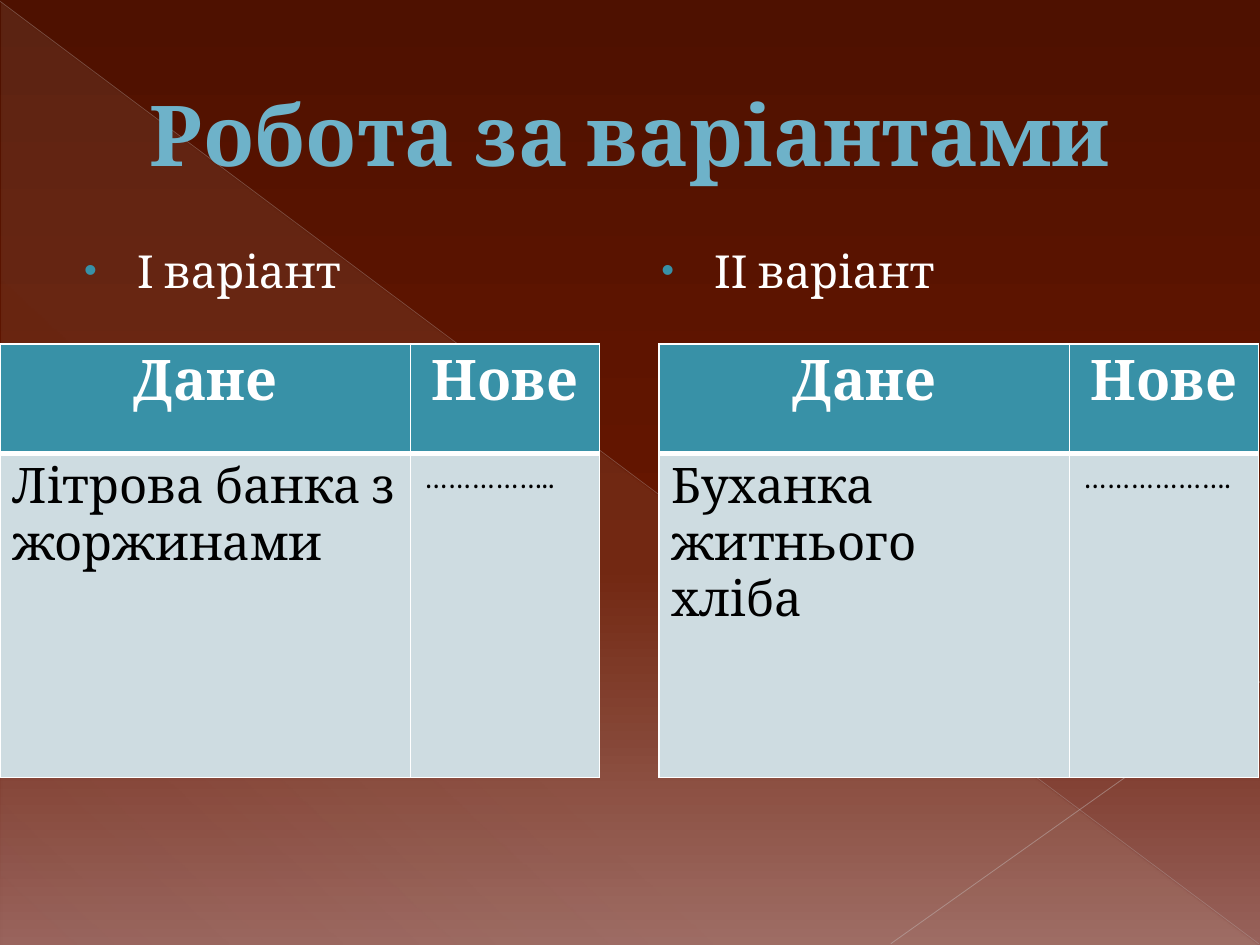
from lxml.etree import SubElement
from pptx import Presentation
from pptx.dml.color import RGBColor
from pptx.enum.shapes import MSO_CONNECTOR as Connector, MSO_SHAPE as Shape
from pptx.enum.text import MSO_ANCHOR as Anchor, PP_ALIGN as Align
from pptx.oxml.ns import qn
from pptx.util import Emu, Inches, Pt

FONT = "Cambria"
WHITE = RGBColor(0xFF, 0xFF, 0xFF)
BLACK = RGBColor(0x00, 0x00, 0x00)
TEAL = RGBColor(0x38, 0x91, 0xA7)
PALE = RGBColor(0xCE, 0xDC, 0xE1)
SKY = RGBColor(0x6E, 0xB2, 0xC9)
DEEP_TEAL = RGBColor(0x27, 0x64, 0x74)
CREAM = RGBColor(0xE7, 0xDE, 0xC9)
DARK_BROWN = RGBColor(0x4E, 0x11, 0x00)
RED_BROWN = RGBColor(0x67, 0x16, 0x00)
DUSTY_ROSE = RGBColor(0x97, 0x62, 0x5B)
WARM_GREY = RGBColor(0xBD, 0xB3, 0xB2)
LIGHT_GREY = RGBColor(0xC5, 0xBC, 0xBB)

TITLE = "Робота за варіантами"
HEADERS = ["Дане", "Нове"]
VARIANTS = [
    {"label": "І варіант", "label_left": 0.5, "table_left": 0,
     "row": ["Літрова банка з жоржинами", "…………….."]},
    {"label": "ІІ варіант", "label_left": 5.08, "table_left": 5.23,
     "row": ["Буханка житнього хліба", "………………."]},
]
COLUMN_WIDTHS = [3.26, 1.5]
ROW_HEIGHTS = [0.87, 2.57]
SKY_STOPS = [(0, DARK_BROWN, 100), (60, RED_BROWN, 100), (100, DUSTY_ROSE, 100)]
TRIANGLE_STOPS = [(0, CREAM, 10), (70, CREAM, 8), (100, CREAM, 1)]
RAYS = [
    ((0, 0.01), (9.99, 7.49), WARM_GREY, 0.39, 35),
    ((10, 5.41), (7.07, 7.49), LIGHT_GREY, 0.47, 45),
]
TITLE_FORMAT = {"name": FONT, "size": Pt(48), "bold": True}
LABEL_FORMAT = {"name": FONT, "size": Pt(26), "bold": False}
HEADER_FORMAT = {"name": FONT, "size": Pt(32), "bold": True}
GIVEN_FORMAT = {"name": FONT, "size": Pt(28), "bold": False}
DOTS_FORMAT = {"name": FONT, "size": Pt(18), "bold": False}


def add_color(parent, color, opacity=100):
    tint = SubElement(parent, qn("a:srgbClr"), val=str(color))
    if opacity < 100:
        SubElement(tint, qn("a:alpha"), val=str(opacity * 1000))


def set_gradient(properties, stops, angle):
    solid = properties.find(qn("a:solidFill"))
    gradient = SubElement(properties, qn("a:gradFill"), rotWithShape="1")
    stop_list = SubElement(gradient, qn("a:gsLst"))
    for position, color, opacity in stops:
        stop = SubElement(stop_list, qn("a:gs"), pos=str(position * 1000))
        add_color(stop, color, opacity)
    SubElement(gradient, qn("a:lin"), ang=str(angle * 60000), scaled="0")
    properties.replace(solid, gradient)


def write(frame, text, color, formats, align=Align.LEFT):
    paragraph = frame.paragraphs[0]
    paragraph.alignment = align
    run = paragraph.add_run()
    run.text = text
    run.font.color.rgb = color
    for attribute, value in formats.items():
        setattr(run.font, attribute, value)
    return paragraph


def add_bullet(paragraph):
    properties = paragraph._p.get_or_add_pPr()
    properties.set("marL", str(Inches(0.49)))
    properties.set("indent", str(Inches(-0.42)))
    before = SubElement(properties, qn("a:spcBef"))
    SubElement(before, qn("a:spcPct"), val="20000")
    add_color(SubElement(properties, qn("a:buClr")), TEAL)
    SubElement(properties, qn("a:buSzPct"), val="80000")
    SubElement(properties, qn("a:buFont"), typeface="Arial")
    SubElement(properties, qn("a:buChar"), char="•")


def style_cell(cell, fill, bottom_width):
    properties = cell._tc.get_or_add_tcPr()
    for side, width in (("L", 1), ("R", 1), ("T", 1), ("B", bottom_width)):
        border = SubElement(properties, qn(f"a:ln{side}"), w=str(Pt(width)))
        add_color(SubElement(border, qn("a:solidFill")), WHITE)
    cell.fill.solid()
    cell.fill.fore_color.rgb = fill


def add_backdrop(slide):
    slide.background.fill.solid()
    set_gradient(slide.element.find(".//" + qn("p:bgPr")), SKY_STOPS, 90)
    triangle = slide.shapes.add_shape(
        Shape.RIGHT_TRIANGLE, *map(Inches, (0.01, 0.02, 9.98, 7.48)))
    triangle.fill.solid()
    set_gradient(triangle._element.spPr, TRIANGLE_STOPS, 133)
    triangle.line.fill.background()
    triangle.shadow.inherit = False
    for start, end, color, width, opacity in RAYS:
        ray = slide.shapes.add_connector(
            Connector.STRAIGHT, *map(Inches, start + end))
        ray.line.width = Pt(width)
        ray.line.color.rgb = color
        properties = ray._element.spPr
        tint = properties.find(".//" + qn("a:srgbClr"))
        SubElement(tint, qn("a:alpha"), val=str(opacity * 1000))
        SubElement(properties, qn("a:effectLst"))


def add_title(slide):
    title = slide.shapes.title
    title.left, title.top, title.width, title.height = map(
        Inches, (0.5, 0.29, 9, 1.53))
    title.text_frame.vertical_anchor = Anchor.MIDDLE
    heading = write(title.text_frame, TITLE, SKY, TITLE_FORMAT, Align.CENTER)
    properties = heading.runs[0].font._element
    outline = SubElement(properties, qn("a:ln"), w=str(Pt(0.5)))
    add_color(SubElement(outline, qn("a:solidFill")), DEEP_TEAL)
    properties.insert(0, outline)
    slide.shapes._spTree.append(title._element)


def add_label(slide, variant):
    label = slide.shapes.add_textbox(
        *map(Inches, (variant["label_left"], 1.88, 4.42, 4.95)))
    label.text_frame.word_wrap = True
    add_bullet(write(label.text_frame, variant["label"], WHITE, LABEL_FORMAT))


def add_variant_table(slide, variant):
    table = slide.shapes.add_table(
        2, 2, Inches(variant["table_left"]), Inches(2.73),
        Inches(sum(COLUMN_WIDTHS)), Inches(sum(ROW_HEIGHTS))).table
    table.horz_banding = False
    for column, width in zip(table.columns, COLUMN_WIDTHS):
        column.width = Inches(width)
    for row, height in zip(table.rows, ROW_HEIGHTS):
        row.height = Inches(height)
    body_formats = [GIVEN_FORMAT, DOTS_FORMAT]
    for index, header in enumerate(HEADERS):
        head, body = table.cell(0, index), table.cell(1, index)
        style_cell(head, TEAL, 3)
        style_cell(body, PALE, 1)
        write(head.text_frame, header, WHITE, HEADER_FORMAT, Align.CENTER)
        write(body.text_frame, variant["row"][index], BLACK, body_formats[index])


def main():
    deck = Presentation()
    deck.slide_width, deck.slide_height = Inches(10), Inches(7.5)
    slide = deck.slides.add_slide(deck.slide_layouts[5])
    add_backdrop(slide)
    add_title(slide)
    for variant in VARIANTS:
        add_label(slide, variant)
    for variant in VARIANTS:
        add_variant_table(slide, variant)
    deck.save("out.pptx")


if __name__ == "__main__":
    main()
